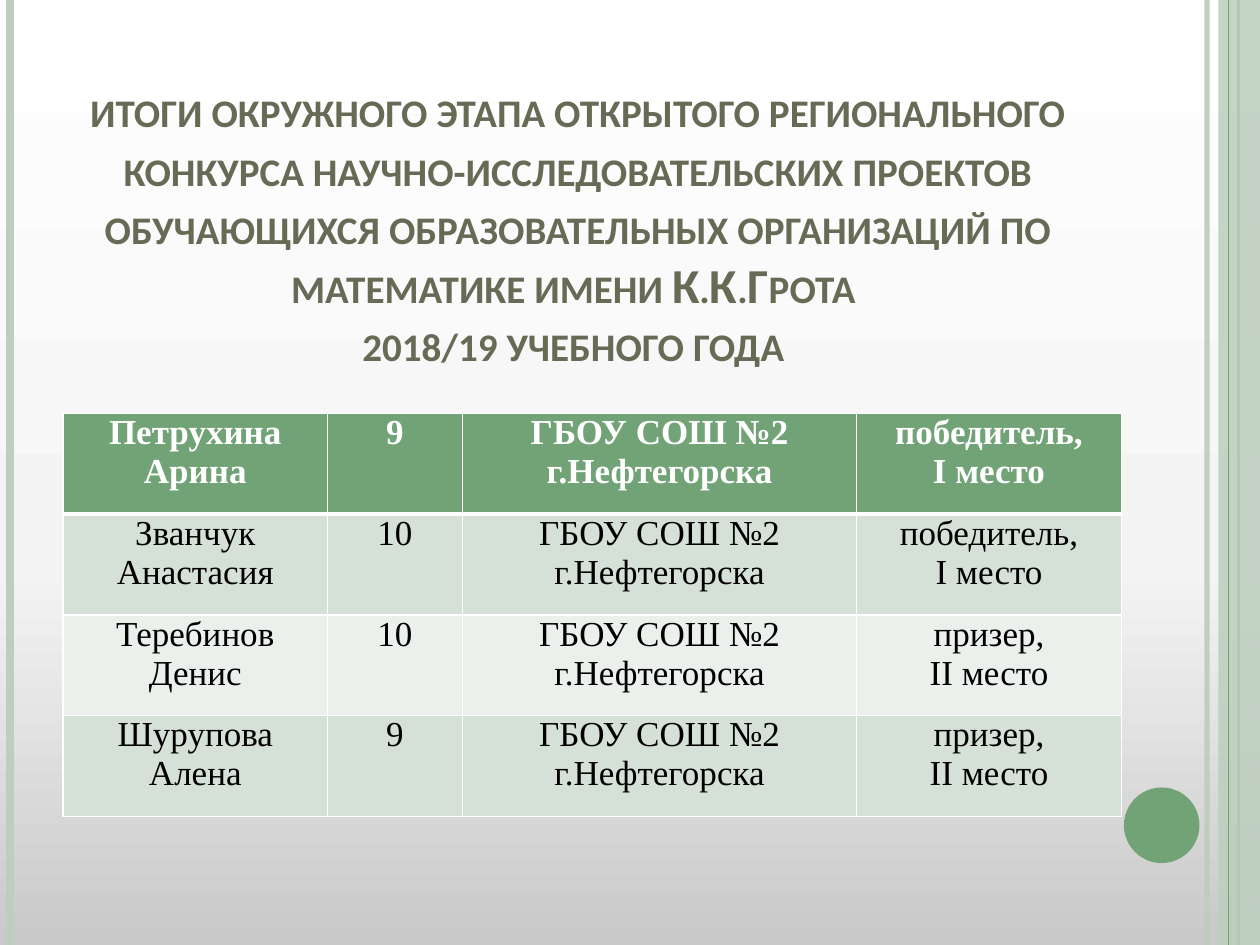
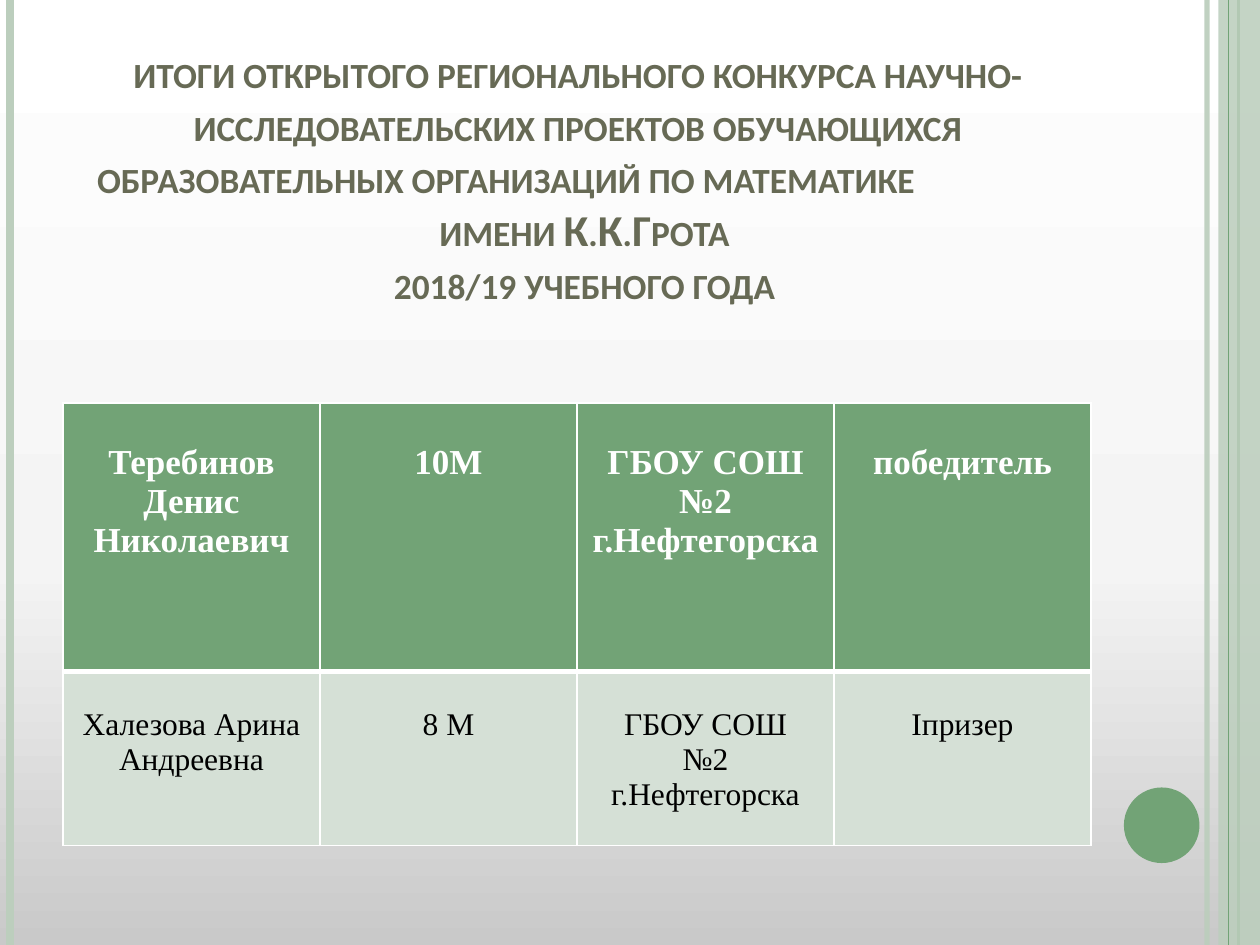
from copy import deepcopy

from lxml import etree
from pptx import Presentation
from pptx.dml.color import RGBColor
from pptx.enum.shapes import MSO_CONNECTOR, MSO_SHAPE
from pptx.enum.text import MSO_ANCHOR, MSO_AUTO_SIZE, PP_ALIGN
from pptx.oxml.ns import qn
from pptx.util import Inches, Pt

STRAIGHT = MSO_CONNECTOR.STRAIGHT
RECTANGLE, OVAL = MSO_SHAPE.RECTANGLE, MSO_SHAPE.OVAL
CENTER, LEFT = PP_ALIGN.CENTER, PP_ALIGN.LEFT
BOTTOM = MSO_ANCHOR.BOTTOM
NO_AUTOFIT = MSO_AUTO_SIZE.NONE

WIDTH, HEIGHT = 10, 7.5
GREEN, PALE_GREEN = "72A376", "BCCEBD"
OLIVE, WHITE, BLACK = "676A55", "FFFFFF", "000000"
BANDS = ["D5E0D6", "EBF0EC"]
BACKGROUND_STOPS = [(0, "C9C9C9"), (0.4, "F4F4F4"), (1, WHITE)]
TITLE_FONT, TABLE_FONT = "Calibri", "Times New Roman"
SCHOOL = "ГБОУ СОШ №2 г.Нефтегорска"


def paint(color_format, color):
    color_format.rgb = RGBColor.from_string(color)


def set_alpha(shape, percent):
    """Make the first colour of the shape partly transparent."""
    color = shape._element.spPr.find(".//" + qn("a:srgbClr"))
    etree.SubElement(color, qn("a:alpha"), val=str(percent * 1000))


def write(para, text, font=TABLE_FONT, size=20, color=BLACK, bold=False,
          align=CENTER, small_caps=False, indent=0):
    """Write one formatted paragraph; a line feed becomes a line break."""
    para.alignment = align
    if indent:
        properties = para._p.get_or_add_pPr()
        properties.set("marL", str(Inches(indent)))
        properties.set("indent", "0")
    for number, line in enumerate(text.split("\n")):
        if number:
            para.add_line_break()
        span = para.add_run()
        span.text = line
        span.font.name, span.font.size, span.font.bold = font, Pt(size), bold
        paint(span.font.color, color)
        if small_caps:
            span.font._element.set("cap", "small")


def next_para(frame, number):
    return frame.add_paragraph() if number else frame.paragraphs[0]


# Shared layout: background, side bands and dot

def set_background(layout):
    fill = layout.background.fill
    fill.gradient()
    fill.gradient_angle = 90
    last_stop = layout.element.findall(".//" + qn("a:gs"))[-1]
    last_stop.addnext(deepcopy(last_stop))
    for stop, (position, color) in zip(fill.gradient_stops, BACKGROUND_STOPS):
        stop.position = position
        paint(stop.color, color)


def add_stripe(page, x, color, weight):
    stripe = page.shapes.add_connector(
        STRAIGHT, Inches(x), 0, Inches(x), Inches(HEIGHT))
    paint(stripe.line.color, color)
    stripe.line.width = Pt(weight)
    etree.SubElement(stripe._element.spPr, qn("a:effectLst"))
    return stripe


def add_filled(page, kind, left, top, width, height, color):
    shape = page.shapes.add_shape(
        kind, Inches(left), Inches(top), Inches(width), Inches(height))
    shape.shadow.inherit = False
    shape.fill.solid()
    paint(shape.fill.fore_color, color)
    shape.line.fill.background()
    return shape


def decorate_layout(layout, page):
    """Draw the decoration on a page, then move it to the shared layout."""
    set_background(layout)
    inner_stripe = add_stripe(page, 9.58, PALE_GREEN, 3)
    set_alpha(inner_stripe, 93)
    left_stripe = add_stripe(page, 0.08, PALE_GREEN, 4.5)
    outer_stripe = add_stripe(page, 9.83, GREEN, 1.5)
    band = add_filled(page, RECTANGLE, 9.67, 0, 0.33, HEIGHT, PALE_GREEN)
    set_alpha(band, 87)
    thin_stripe = add_stripe(page, 9.75, GREEN, 0.75)
    dot = add_filled(page, OVAL, 8.92, 6.25, 0.6, 0.6, GREEN)
    for part in (inner_stripe, left_stripe, outer_stripe, band,
                 thin_stripe, dot):
        layout.shapes._spTree.append(part._element)


# Title

def fill_title(page, box, paragraphs, size, bottom_inset=0.05):
    title = page.shapes.title
    title.left, title.top, title.width, title.height = map(Inches, box)
    frame = title.text_frame
    frame.word_wrap = True
    frame.auto_size = NO_AUTOFIT
    frame.vertical_anchor = BOTTOM
    frame.margin_bottom = Inches(bottom_inset)
    for number, (text, options) in enumerate(paragraphs):
        write(next_para(frame, number), text, font=TITLE_FONT, size=size,
              color=OLIVE, bold=True, small_caps=True, **options)


# Results table

def set_borders(cell, top=1, bottom=1):
    properties = cell._tc.get_or_add_tcPr()
    weights = {"lnL": 1, "lnR": 1, "lnT": top, "lnB": bottom}
    for position, (side, weight) in enumerate(weights.items()):
        line = etree.Element(qn("a:" + side), w=str(Pt(weight)))
        fill = etree.SubElement(line, qn("a:solidFill"))
        etree.SubElement(fill, qn("a:srgbClr"), val=WHITE)
        properties.insert(position, line)


def add_results(page, left, top, columns, heights, rows, body_size=20,
                blank_lines=0):
    """Add the table; blank_lines is the space above each text, in lines."""
    table = page.shapes.add_table(
        len(rows), len(columns), Inches(left), Inches(top),
        Inches(sum(columns)), Inches(sum(heights))).table
    for column, width in zip(table.columns, columns):
        column.width = Inches(width)
    for index, (row, height) in enumerate(zip(rows, heights)):
        table.rows[index].height = Inches(height)
        header = index == 0
        size = 20 if header else body_size
        for cell, text in zip(table.rows[index].cells, row):
            cell.margin_left = cell.margin_right = Inches(0.07)
            cell.margin_top = Pt(blank_lines * size * 1.15)
            cell.margin_bottom = 0
            cell.fill.solid()
            paint(cell.fill.fore_color,
                  GREEN if header else BANDS[(index - 1) % 2])
            set_borders(cell, top=3 if index == 1 else 1,
                        bottom=3 if header else 1)
            for number, line in enumerate(text.split("\n")):
                write(next_para(cell.text_frame, number), line, size=size,
                      color=WHITE if header else BLACK, bold=header)


# Slides

def build_district_stage(page):
    fill_title(page, (0.5, 0.7, 8.17, 3.2), [
        ("итоги окружного этапа открытого регионального конкурса "
         "научно-исследовательских проектов обучающихся образовательных "
         "организаций по математике имени К.К.Грота \n"
         "2018/19 учебного года ", {}),
    ], size=27.9, bottom_inset=0.95)
    add_results(page, 0.5, 3.28, [2.1, 1.07, 3.13, 2.1], [0.8] * 4, [
        ("Петрухина Арина", "9", SCHOOL, "победитель,\nI место"),
        ("Званчук Анастасия", "10", SCHOOL, "победитель,\nI место"),
        ("Теребинов Денис", "10", SCHOOL, "призер,\nII место"),
        ("Шурупова Алена", "9", SCHOOL, "призер,\nII место"),
    ])


def build_regional_stage(page):
    fill_title(page, (0.5, 0.3, 8.17, 2.2), [
        ("итоги открытого регионального конкурса научно-"
         "исследовательских проектов обучающихся", {}),
        ("образовательных организаций по математике",
         {"align": LEFT, "indent": 0.17}),
        ("имени К.К.Грота \n2018/19 учебного года ", {}),
    ], size=25.2)
    add_results(page, 0.5, 3.2, [2.04] * 4, [2.13, 1.38], [
        ("Теребинов Денис Николаевич", "10М", SCHOOL, "победитель"),
        ("Халезова Арина Андреевна", "8 М",
         "ГБОУ СОШ\n№2 г.Нефтегорска", "Iпризер"),
    ], body_size=18, blank_lines=1)


def main():
    deck = Presentation()
    deck.slide_width, deck.slide_height = Inches(WIDTH), Inches(HEIGHT)
    layout = deck.slide_layouts.get_by_name("Title Only")
    pages = [deck.slides.add_slide(layout) for _ in range(2)]
    decorate_layout(layout, pages[0])
    build_district_stage(pages[0])
    build_regional_stage(pages[1])
    deck.save("out.pptx")


if __name__ == "__main__":
    main()
